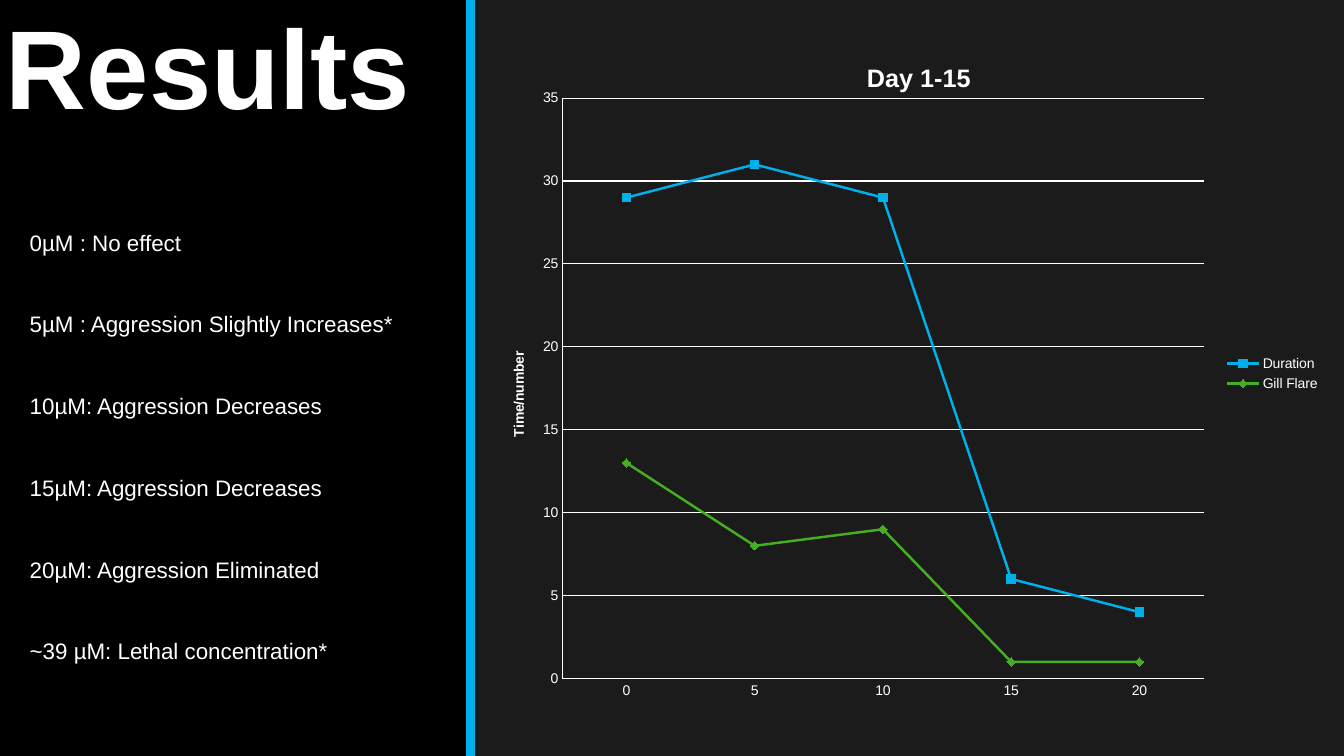
import dataclasses

import pptx
import pptx.chart.data
import pptx.dml.color
import pptx.enum.chart
import pptx.enum.shapes
import pptx.enum.text
import pptx.oxml
import pptx.oxml.ns
import pptx.util

Cm = pptx.util.Cm
Pt = pptx.util.Pt
RGBColor = pptx.dml.color.RGBColor
XL = pptx.enum.chart

BLACK = RGBColor(0x00, 0x00, 0x00)
CHARCOAL = RGBColor(0x1B, 0x1B, 0x1B)
WHITE = RGBColor(0xFF, 0xFF, 0xFF)
BLUE = RGBColor(0x00, 0xB0, 0xEA)
GREEN = RGBColor(0x45, 0xAE, 0x22)

SLIDE_W, SLIDE_H = Cm(33.87), Cm(19.05)
PANEL_W = Cm(11.86)


@dataclasses.dataclass
class TextBlock:
    lines: list[str]
    left: float
    top: float
    width: float
    height: float
    font: dict
    frame: dict
    paragraph: dict


@dataclasses.dataclass
class Series:
    name: str
    values: list[int]
    color: RGBColor
    marker: XL.XL_MARKER_STYLE


def apply(target, values: dict) -> None:
    for name, value in values.items():
        setattr(target, name, value)


def style_font(font, size: float, bold: bool = False) -> None:
    apply(font, {"name": "Arial", "size": Pt(size), "bold": bold})
    font.color.rgb = WHITE


def add_text(slide, block: TextBlock) -> None:
    sp = slide.shapes.add_textbox(Cm(block.left), Cm(block.top),
                                  Cm(block.width), Cm(block.height))
    tf = sp.text_frame
    apply(tf, {"word_wrap": True, **block.frame})
    for i, line in enumerate(block.lines):
        p = tf.add_paragraph() if i else tf.paragraphs[0]
        apply(p, block.paragraph)
        r = p.add_run()
        r.text = line
        style_font(r.font, **block.font)


def add_title(owner, text: str, size: float) -> None:
    tf = owner.text_frame
    tf.text = text
    style_font(tf.paragraphs[0].runs[0].font, size, True)


def set_plot_area(chart, x: float, y: float, w: float, h: float) -> None:
    area = chart._chartSpace.chart.plotArea
    for old in area.findall(pptx.oxml.ns.qn("c:layout")):
        area.remove(old)
    parts = "".join(f'<c:{tag} val="{val}"/>' for tag, val in (
        ("layoutTarget", "inner"), ("xMode", "edge"), ("yMode", "edge"),
        ("x", x), ("y", y), ("w", w), ("h", h)))
    area.insert(0, pptx.oxml.parse_xml(
        f'<c:layout {pptx.oxml.ns.nsdecls("c")}>'
        f'<c:manualLayout>{parts}</c:manualLayout></c:layout>'))


def add_line_chart(slide, categories: list[str], series: list[Series]) -> None:
    data = pptx.chart.data.CategoryChartData()
    data.categories = categories
    for item in series:
        data.add_series(item.name, item.values)
    chart = slide.shapes.add_chart(XL.XL_CHART_TYPE.LINE_MARKERS, Cm(12.78), Cm(0.97),
                                   Cm(20.75), Cm(16.89), data).chart
    style_font(chart.font, 10)
    apply(chart, {"has_title": True, "has_legend": True})
    add_title(chart.chart_title, "Day 1-15", 18)
    apply(chart.legend, {"position": XL.XL_LEGEND_POSITION.RIGHT,
                         "include_in_layout": False})
    set_plot_area(chart, 0.067, 0.089, 0.779, 0.866)

    # Axes
    for axis in (chart.category_axis, chart.value_axis):
        apply(axis, {"major_tick_mark": XL.XL_TICK_MARK.NONE,
                     "minor_tick_mark": XL.XL_TICK_MARK.NONE})
        axis.format.line.color.rgb = WHITE
        axis.format.line.width = Pt(0.75)
    value_axis = chart.value_axis
    apply(value_axis, {"minimum_scale": 0, "maximum_scale": 35, "major_unit": 5,
                       "has_major_gridlines": True, "has_title": True})
    grid = value_axis.major_gridlines.format.line
    grid.color.rgb = WHITE
    grid.width = Pt(0.75)
    add_title(value_axis.axis_title, "Time/number", 10)

    # Series
    chart.plots[0].vary_by_categories = False
    for drawn, item in zip(chart.plots[0].series, series):
        drawn.smooth = False
        drawn.format.line.color.rgb = item.color
        drawn.format.line.width = Pt(1.75)
        apply(drawn.marker, {"style": item.marker, "size": 6})
        drawn.marker.format.fill.solid()
        drawn.marker.format.fill.fore_color.rgb = item.color
        drawn.marker.format.line.color.rgb = item.color


def main() -> None:
    prs = pptx.Presentation()
    apply(prs, {"slide_width": SLIDE_W, "slide_height": SLIDE_H})
    slide = prs.slides.add_slide(prs.slide_layouts[6])
    slide.background.fill.solid()
    slide.background.fill.fore_color.rgb = CHARCOAL

    # Left panel and its edge
    panel = slide.shapes.add_shape(pptx.enum.shapes.MSO_SHAPE.RECTANGLE,
                                   0, 0, PANEL_W, SLIDE_H)
    panel.shadow.inherit = False
    panel.fill.solid()
    panel.fill.fore_color.rgb = BLACK
    panel.line.fill.background()
    edge = slide.shapes.add_connector(pptx.enum.shapes.MSO_CONNECTOR.STRAIGHT,
                                      PANEL_W, 0, PANEL_W, SLIDE_H)
    edge.line.color.rgb = BLUE
    edge.line.width = Pt(6)
    edge._element.spPr.append(pptx.oxml.parse_xml(
        f'<a:effectLst {pptx.oxml.ns.nsdecls("a")}/>'))

    # Title and findings
    top = pptx.enum.text.MSO_ANCHOR.TOP
    blocks = [
        TextBlock(["Results"], 0, 0, 11.84, 4.45, {"size": 80, "bold": True},
                  {"vertical_anchor": top, "margin_left": Cm(0.15),
                   "margin_top": Cm(0.33)},
                  {"line_spacing": 0.9}),
        TextBlock(["0µM : No effect",
                   "5µM : Aggression Slightly Increases*",
                   "10µM: Aggression Decreases",
                   "15µM: Aggression Decreases",
                   "20µM: Aggression Eliminated",
                   "~39 µM: Lethal concentration*"],
                  0.5, 5.64, 10.85, 12.6, {"size": 16},
                  {"vertical_anchor": top}, {"space_after": Pt(39.2)}),
    ]
    for block in blocks:
        add_text(slide, block)

    # Chart
    add_line_chart(slide, ["0", "5", "10", "15", "20"], [
        Series("Duration", [29, 31, 29, 6, 4], BLUE, XL.XL_MARKER_STYLE.SQUARE),
        Series("Gill Flare", [13, 8, 9, 1, 1], GREEN, XL.XL_MARKER_STYLE.DIAMOND),
    ])

    prs.save("out.pptx")


if __name__ == "__main__":
    main()
